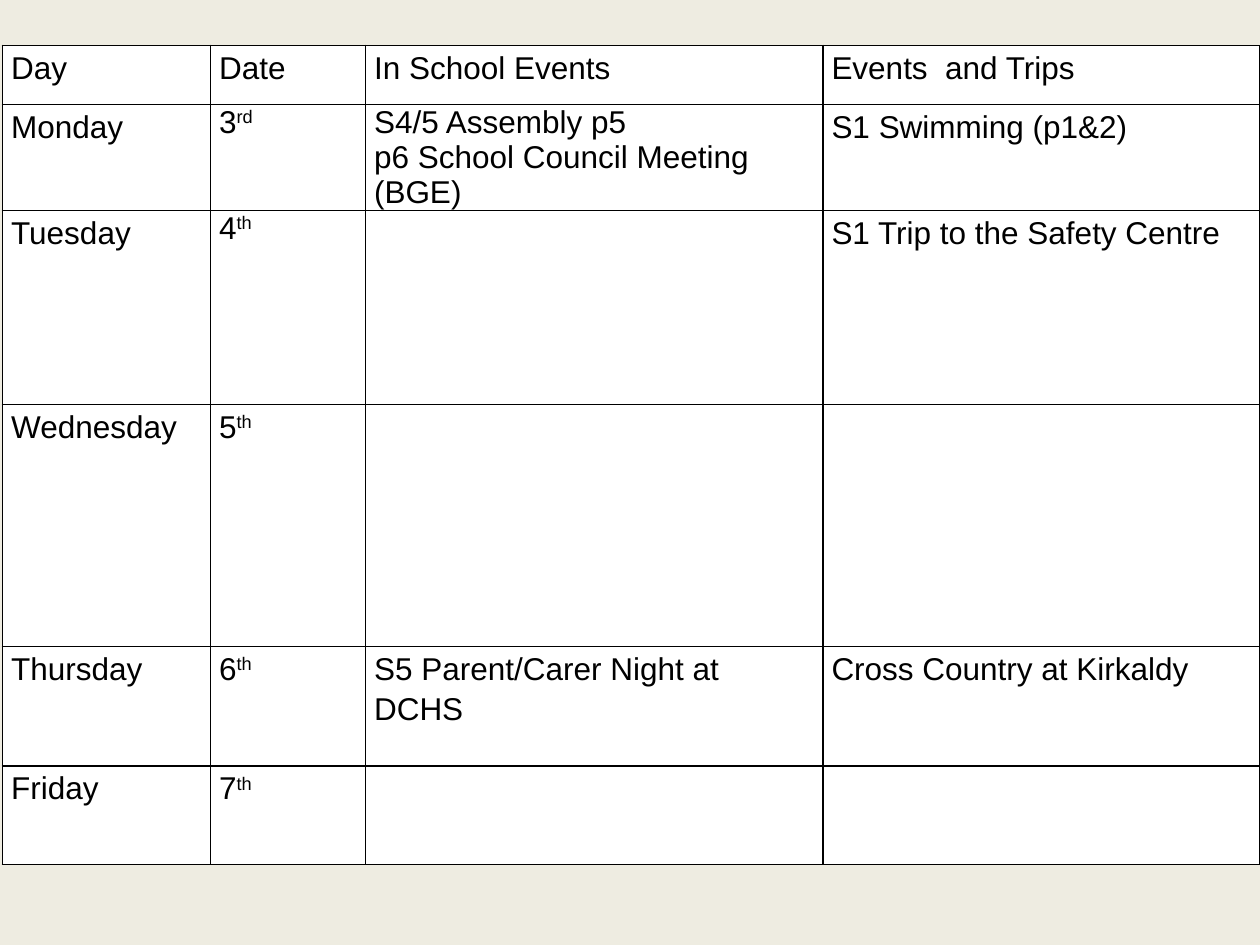
from lxml.etree import SubElement
from pptx import Presentation
from pptx.dml.color import RGBColor
from pptx.oxml.ns import qn
from pptx.util import Pt

BLACK = RGBColor(0, 0, 0)
WHITE = RGBColor(255, 255, 255)
CREAM = RGBColor(0xEE, 0xEC, 0xE1)

COLS = [118.8, 88.6, 261.4, 249.8]
ROWS = [33.8, 56.9, 110.9, 138.2, 68.4, 56.2]
WEEK = [
    ["Day", "Date", "In School Events", "Events  and Trips"],
    ["Monday", "3^rd", "S4/5 Assembly p5\np6 School Council Meeting (BGE)",
     "S1 Swimming (p1&2)"],
    ["Tuesday", "4^th", "", "S1 Trip to the Safety Centre"],
    ["Wednesday", "5^th", "", ""],
    ["Thursday", "6^th", "S5 Parent/Carer Night at DCHS",
     "Cross Country at Kirkaldy"],
    ["Friday", "7^th", "", ""],
]
TIGHT = {(1, 1), (1, 2), (2, 1)}


def write(frame, text, size=18, font="Arial", color=BLACK, space=1.15):
    for i, line in enumerate(text.split("\n")):
        para = frame.paragraphs[0] if i == 0 else frame.add_paragraph()
        para.line_spacing = space
        base, _, mark = line.partition("^")
        for part, raised in ((base, False), (mark, True)):
            if not part:
                continue
            run = para.add_run()
            run.text = part
            run.font.size = Pt(size)
            run.font.name = font
            run.font.color.rgb = color
            if raised:
                run._r.get_or_add_rPr().set("baseline", "30000")


def border(cell, color=BLACK, width=1):
    props = cell._tc.get_or_add_tcPr()
    for side in ("lnL", "lnR", "lnT", "lnB"):
        line = SubElement(props, qn(f"a:{side}"), w=str(Pt(width)))
        fill = SubElement(line, qn("a:solidFill"))
        SubElement(fill, qn("a:srgbClr"), val=str(color))


def planner(slide, left, top, width, height):
    shape = slide.shapes.add_table(
        len(ROWS), len(COLS), Pt(left), Pt(top), Pt(width), Pt(height))
    table = shape.table
    table.first_row = False
    table.horz_banding = False
    for col, size in zip(table.columns, COLS):
        col.width = Pt(width * size / sum(COLS))
    for row, size in zip(table.rows, ROWS):
        row.height = Pt(height * size / sum(ROWS))
    for r, items in enumerate(WEEK):
        for c, text in enumerate(items):
            cell = table.cell(r, c)
            cell.margin_left = cell.margin_right = Pt(5)
            cell.margin_top = cell.margin_bottom = Pt(0)
            border(cell)
            cell.fill.solid()
            cell.fill.fore_color.rgb = WHITE
            write(cell.text_frame, text,
                  space=1.0 if (r, c) in TIGHT else 1.15)


def main():
    deck = Presentation()
    deck.slide_width, deck.slide_height = Pt(720), Pt(540)
    slide = deck.slides.add_slide(deck.slide_layouts[6])
    slide.background.fill.solid()
    slide.background.fill.fore_color.rgb = CREAM
    planner(slide, 1.4, 26, sum(COLS), sum(ROWS))
    deck.save("out.pptx")


if __name__ == "__main__":
    main()
